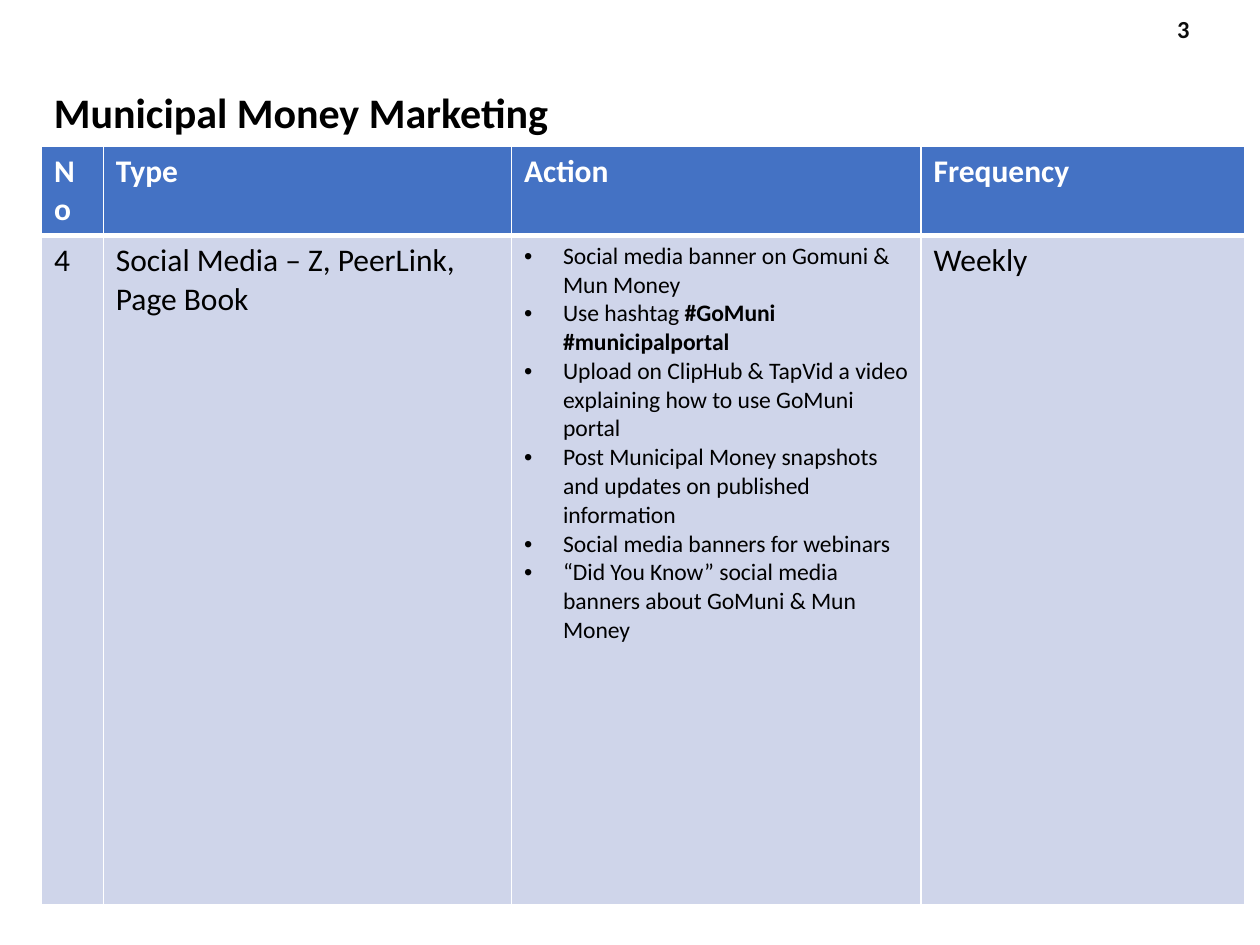
from lxml import etree
from pptx import Presentation
from pptx.dml.color import RGBColor
from pptx.enum import text
from pptx.oxml.ns import qn
from pptx.util import Inches, Pt

# Content: each cell is a list of paragraphs, each paragraph a list of (text, bold)
PAGE_NUMBER = "3"
TITLE = "Municipal Money Marketing"
HEADINGS = ["No", "Type", "Action", "Frequency"]
ENTRY = ["4", "Social Media – Z, PeerLink, Page Book", None, "Weekly"]
ACTIONS = [
    [("Social media banner on Gomuni & Mun Money", False)],
    [("Use hashtag ", False), ("#GoMuni #municipalportal", True)],
    [("Upload on ClipHub & TapVid a video explaining how to use GoMuni portal", False)],
    [("Post Municipal Money snapshots and updates on published information", False)],
    [("Social media banners for webinars", False)],
    [("“Did You Know” social media banners about GoMuni & Mun Money", False)],
]
COLUMN_WIDTHS = [0.49, 3.24, 3.25, 2.57]
ROW_HEIGHTS = [0.71, 5.31]
HEADER_FILL, BODY_FILL, WHITE, BLACK = "4472C4", "CFD5EA", "FFFFFF", "000000"


def color(value):
    return RGBColor.from_string(value)


def add_span(para, words, size, ink, bold):
    span = para.add_run()
    span.text = words
    span.font.name = "Calibri"
    span.font.size = Pt(size)
    span.font.bold = bold
    span.font.color.rgb = color(ink)


def add_label(page, place, words, size, ink, anchor, align):
    box = page.shapes.add_textbox(*(Inches(v) for v in place))
    frame = box.text_frame
    frame.word_wrap = True
    frame.vertical_anchor = anchor
    para = frame.paragraphs[0]
    para.alignment = align
    add_span(para, words, size, ink, True)
    return para


def add_bullet(para, indent):
    props = para._p.get_or_add_pPr()
    props.set("marL", str(Inches(indent)))
    props.set("indent", str(-Inches(indent)))
    etree.SubElement(props, qn("a:buFont")).set("typeface", "Arial")
    etree.SubElement(props, qn("a:buChar")).set("char", "•")


def set_borders(cell, top, bottom):
    props = cell._tc.get_or_add_tcPr()
    sides = [("L", 1), ("R", 1), ("T", top), ("B", bottom)]
    for place, (side, width) in enumerate(sides):
        line = etree.Element(qn("a:ln" + side), w=str(Pt(width)))
        fill = etree.SubElement(line, qn("a:solidFill"))
        etree.SubElement(fill, qn("a:srgbClr")).set("val", WHITE)
        props.insert(place, line)


deck = Presentation()
deck.slide_width, deck.slide_height = Inches(10), Inches(7.5)
page = deck.slides.add_slide(deck.slide_layouts[6])

# Page number and title
add_label(page, (9.1, 0, 0.44, 0.45), PAGE_NUMBER, 14, "0D0D0D",
          text.MSO_ANCHOR.MIDDLE, text.PP_ALIGN.RIGHT)
title = add_label(page, (0.33, 0.68, 9.34, 0.48), TITLE, 24, BLACK,
                  text.MSO_ANCHOR.TOP, text.PP_ALIGN.LEFT)
title.line_spacing = 0.9

# Table grid
table = page.shapes.add_table(
    2, len(HEADINGS), Inches(0.33), Inches(1.16),
    Inches(sum(COLUMN_WIDTHS)), Inches(sum(ROW_HEIGHTS))).table
for column, width in zip(table.columns, COLUMN_WIDTHS):
    column.width = Inches(width)
for row, height in zip(table.rows, ROW_HEIGHTS):
    row.height = Inches(height)

# Header and entry cells
rows = [(HEADINGS, HEADER_FILL, WHITE, True, 1, 3),
        (ENTRY, BODY_FILL, BLACK, False, 3, 1)]
for r, (values, fill, ink, bold, top, bottom) in enumerate(rows):
    for c, words in enumerate(values):
        cell = table.cell(r, c)
        cell.fill.solid()
        cell.fill.fore_color.rgb = color(fill)
        set_borders(cell, top, bottom)
        if words:
            add_span(cell.text_frame.paragraphs[0], words, 18, ink, bold)

# Bulleted actions
frame = table.cell(1, HEADINGS.index("Action")).text_frame
for i, spans in enumerate(ACTIONS):
    para = frame.add_paragraph() if i else frame.paragraphs[0]
    add_bullet(para, 0.31)
    for words, bold in spans:
        add_span(para, words, 13.5, BLACK, bold)

deck.save("out.pptx")
